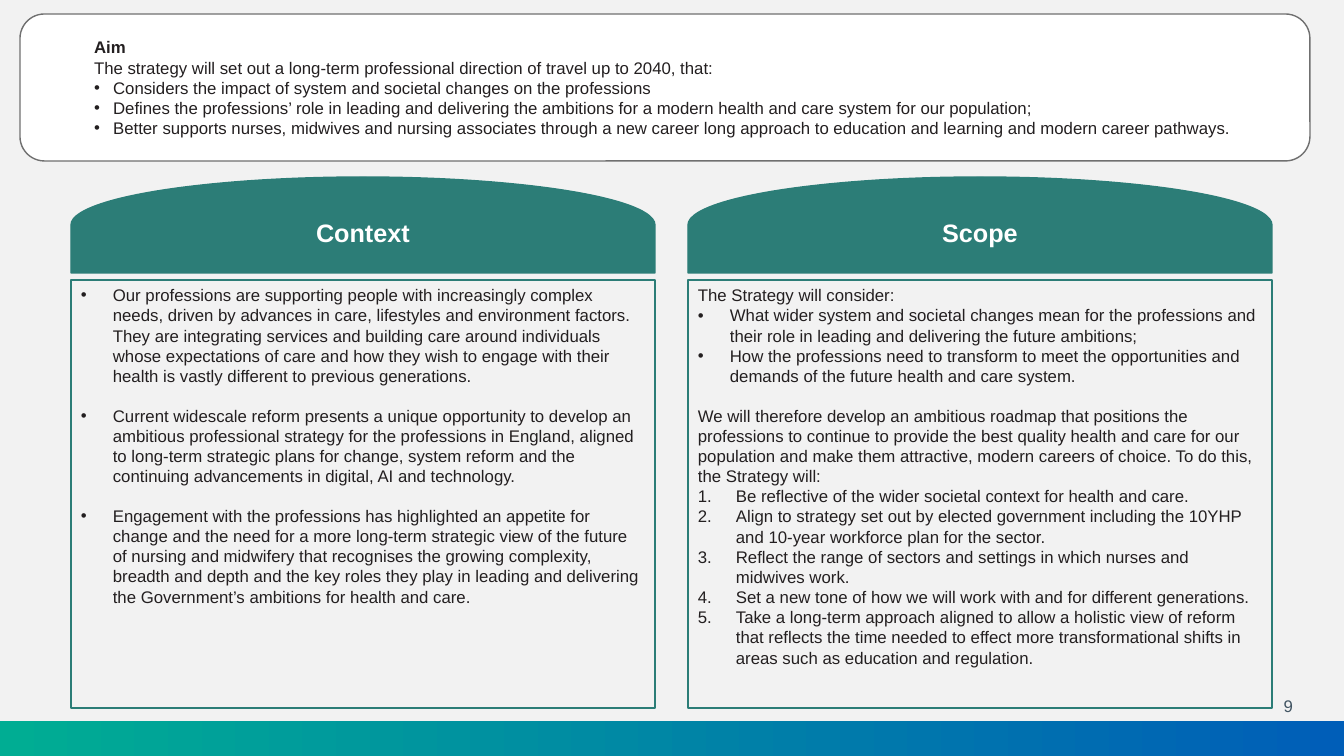
from lxml import etree
from pptx import Presentation
from pptx.dml.color import RGBColor
from pptx.enum.shapes import MSO_SHAPE
from pptx.enum.text import MSO_ANCHOR, PP_ALIGN
from pptx.oxml.ns import qn
from pptx.util import Pt

RECTANGLE = MSO_SHAPE.RECTANGLE
ROUNDED = MSO_SHAPE.ROUNDED_RECTANGLE
DELAY = MSO_SHAPE.FLOWCHART_DELAY
LEFT, CENTER, RIGHT = PP_ALIGN.LEFT, PP_ALIGN.CENTER, PP_ALIGN.RIGHT
TOP, MIDDLE = MSO_ANCHOR.TOP, MSO_ANCHOR.MIDDLE

BACKGROUND = RGBColor(0xF2, 0xF2, 0xF2)
WHITE = RGBColor(0xFF, 0xFF, 0xFF)
TEAL = RGBColor(0x2C, 0x7D, 0x77)
GREY = RGBColor(0x70, 0x70, 0x70)
INK = RGBColor(0x23, 0x1F, 0x20)
SLATE = RGBColor(0x42, 0x55, 0x63)
GREEN = RGBColor(0x00, 0xAD, 0x93)
BLUE = RGBColor(0x00, 0x5E, 0xB8)

PX_PER_INCH = 100.8
SLIDE_WIDTH, SLIDE_HEIGHT = 1344, 756
COLUMN_WIDTH, HEADER_HEIGHT = 584, 96
HEADER_TOP, BODY_TOP, BODY_HEIGHT = 177, 280, 428
COLUMN_LEFT, COLUMN_PITCH = 71, 617
LINE_GAP = 14  # points, one line of body text

# Each paragraph: text, marker ("", "•" or "1."), hanging indent in px, points after
AIM = [
    ("Aim", "", 0, 0),
    ("The strategy will set out a long-term professional direction of travel up to 2040, that:", "", 0, 0),
    ("Considers the impact of system and societal changes on the professions", "•", 19, 0),
    ("Defines the professions’ role in leading and delivering the ambitions for a modern health "
     "and care system for our population;", "•", 19, 0),
    ("Better supports nurses, midwives and nursing associates through a new career long approach "
     "to education and learning and modern career pathways.", "•", 19, 0),
]
CONTEXT = [
    ("Our professions are supporting people with increasingly complex needs, driven by advances in "
     "care, lifestyles and environment factors. They are integrating services and building care "
     "around individuals whose expectations of care and how they wish to engage with their health "
     "is vastly different to previous generations.", "•", 32, LINE_GAP),
    ("Current widescale reform presents a unique opportunity to develop an ambitious professional "
     "strategy for the professions in England, aligned to long-term strategic plans for change, "
     "system reform and the continuing advancements in digital, AI and technology.", "•", 32, LINE_GAP),
    ("Engagement with the professions has highlighted an appetite for change and the need for a "
     "more long-term strategic view of the future of nursing and midwifery that recognises the "
     "growing complexity, breadth and depth and the key roles they play in leading and delivering "
     "the Government’s ambitions for health and care.", "•", 32, 0),
]
SCOPE = [
    ("The Strategy will consider:", "", 0, 0),
    ("What wider system and societal changes mean for the professions and their role in leading "
     "and delivering the future ambitions;", "•", 32, 0),
    ("How the professions need to transform to meet the opportunities and demands of the future "
     "health and care system.", "•", 32, LINE_GAP),
    ("We will therefore develop an ambitious roadmap that positions the professions to continue to "
     "provide the best quality health and care for our population and make them attractive, modern "
     "careers of choice. To do this, the Strategy will:", "", 0, 0),
    ("Be reflective of the wider societal context for health and care.", "1.", 38, 0),
    ("Align to strategy set out by elected government including the 10YHP and 10-year workforce "
     "plan for the sector.", "1.", 38, 0),
    ("Reflect the range of sectors and settings in which nurses and midwives work.", "1.", 38, 0),
    ("Set a new tone of how we will work with and for different generations.", "1.", 38, 0),
    ("Take a long-term approach aligned to allow a holistic view of reform that reflects the time "
     "needed to effect more transformational shifts in areas such as education and regulation.",
     "1.", 38, 0),
]
COLUMNS = [("Context", CONTEXT), ("Scope", SCOPE)]


def emu(px):
    return round(px * 914400 / PX_PER_INCH)


class SlideBuilder:
    font_name = "Arial"
    body_size = 12
    header_size = 18

    def __init__(self, slide):
        self.slide = slide
        background = slide.background.fill
        background.solid()
        background.fore_color.rgb = BACKGROUND

    def shape(self, kind, left, top, width, height, fill=None, line=None):
        shape = self.slide.shapes.add_shape(kind, *map(emu, (left, top, width, height)))
        shape.shadow.inherit = False
        if fill is None:
            shape.fill.background()
        else:
            shape.fill.solid()
            shape.fill.fore_color.rgb = fill
        if line is None:
            shape.line.fill.background()
        else:
            shape.line.color.rgb = line
            shape.line.width = Pt(1)
        return shape

    def format_paragraph(self, paragraph, size, color, alignment=LEFT, bold=False):
        paragraph.alignment = alignment
        for run in paragraph.runs:
            run.font.name = self.font_name
            run.font.size = Pt(size)
            run.font.color.rgb = color
            run.font.bold = bold

    def hang(self, paragraph, marker, indent):
        """Give a paragraph a bullet or an automatic number with a hanging indent."""
        properties = paragraph._p.get_or_add_pPr()
        properties.set("marL", str(emu(indent)))
        properties.set("indent", str(-emu(indent)))
        etree.SubElement(properties, qn("a:buFont")).set("typeface", self.font_name)
        if marker == "1.":
            etree.SubElement(properties, qn("a:buAutoNum")).set("type", "arabicPeriod")
        else:
            etree.SubElement(properties, qn("a:buChar")).set("char", marker)

    def body_text(self, shape, items, anchor):
        frame = shape.text_frame
        frame.word_wrap = True
        frame.vertical_anchor = anchor
        frame.text = "\n".join(item[0] for item in items)
        for paragraph, (_, marker, indent, gap) in zip(frame.paragraphs, items):
            self.format_paragraph(paragraph, self.body_size, INK)
            paragraph.space_after = Pt(gap)
            if marker:
                self.hang(paragraph, marker, indent)

    def gradient_band(self, top, height):
        band = self.shape(RECTANGLE, 0, top, SLIDE_WIDTH, height)
        band.fill.gradient()
        band.fill.gradient_angle = 0
        for stop, color in zip(band.fill.gradient_stops, (GREEN, BLUE)):
            stop.color.rgb = color

    def page_number(self, number, left, top, width, height):
        box = self.slide.shapes.add_textbox(*map(emu, (left, top, width, height)))
        box.text_frame.text = number
        self.format_paragraph(box.text_frame.paragraphs[0], self.body_size, SLATE, RIGHT)

    def column_header(self, title, left):
        """Turn a delay shape on its side so that its arc faces up."""
        offset = (COLUMN_WIDTH - HEADER_HEIGHT) // 2
        header = self.shape(DELAY, left + offset, HEADER_TOP - offset,
                            HEADER_HEIGHT, COLUMN_WIDTH, TEAL, TEAL)
        header.rotation = 270
        frame = header.text_frame
        frame.text = title
        frame.vertical_anchor = MIDDLE
        frame._txBody.bodyPr.set("vert", "vert")
        self.format_paragraph(frame.paragraphs[0], self.header_size, WHITE, CENTER, True)

    def column(self, title, items, left):
        body = self.shape(RECTANGLE, left, BODY_TOP, COLUMN_WIDTH, BODY_HEIGHT, line=TEAL)
        self.body_text(body, items, TOP)
        self.column_header(title, left)

    def aim_panel(self, left, top, width, height):
        panel = self.shape(ROUNDED, left, top, width, height, WHITE, GREY)
        panel.text_frame.margin_left = emu(67)
        self.body_text(panel, AIM, MIDDLE)
        panel.text_frame.paragraphs[0].runs[0].font.bold = True


def main():
    presentation = Presentation()
    presentation.slide_width = emu(SLIDE_WIDTH)
    presentation.slide_height = emu(SLIDE_HEIGHT)
    blank_layout = presentation.slide_layouts[6]
    builder = SlideBuilder(presentation.slides.add_slide(blank_layout))
    builder.page_number("9", 1262, 691, 41, 30)
    builder.gradient_band(721, 35)
    for index, (title, items) in enumerate(COLUMNS):
        builder.column(title, items, COLUMN_LEFT + index * COLUMN_PITCH)
    builder.aim_panel(20, 14, 1290, 147)
    presentation.save("out.pptx")


if __name__ == "__main__":
    main()
